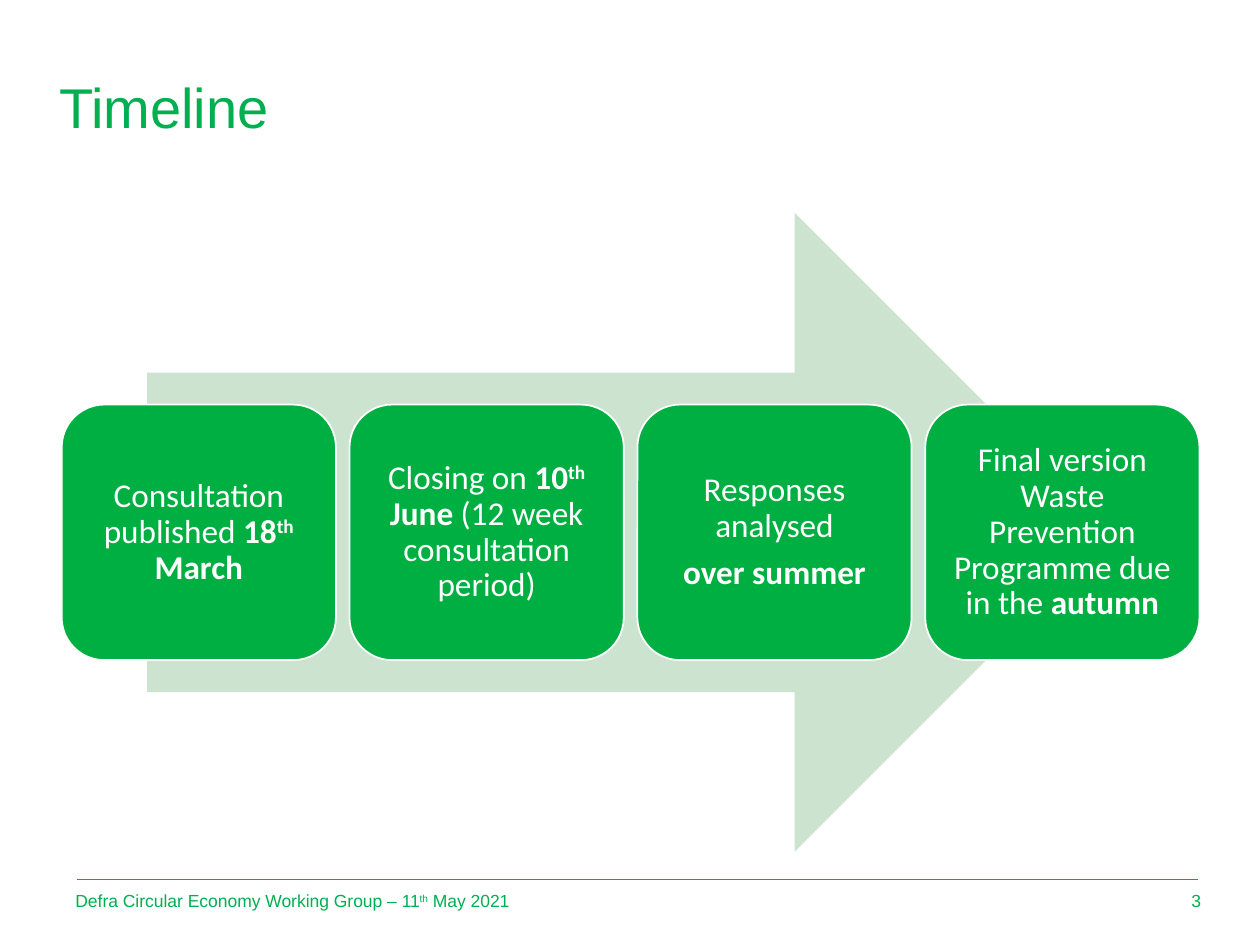
import dataclasses

import pptx
import pptx.dml.color
import pptx.enum.shapes
import pptx.enum.text
import pptx.oxml
import pptx.util

SHAPES = pptx.enum.shapes.MSO_SHAPE
ALIGN = pptx.enum.text.PP_ALIGN


@dataclasses.dataclass(frozen=True)
class Theme:
    """Colours, fonts and type sizes of the deck."""
    green: str = "00AF41"
    text_green: str = "00B050"
    pale: str = "CCE3CF"
    white: str = "FFFFFF"
    heading_font: str = "Arial"
    step_font: str = "Calibri"
    title_size: float = 32
    step_size: float = 19
    footer_size: float = 10


@dataclasses.dataclass(frozen=True)
class Box:
    """A rectangle in inches."""
    left: float
    top: float
    width: float
    height: float

    def share(self, left, top, width, height):
        """Return the box covering the given shares of this one."""
        return Box(self.left + left * self.width, self.top + top * self.height,
                   width * self.width, height * self.height)

    def lengths(self):
        """Return left, top, width and height as slide lengths."""
        return [pptx.util.Inches(value) for value in dataclasses.astuple(self)]


THEME = Theme()
STEPS = [
    [[("Consultation published ", ""), ("18", "b"), ("th", "b^"), (" March", "b")]],
    [[("Closing on ", ""), ("10", "b"), ("th", "b^"), (" June ", "b"),
      ("(12 week consultation period)", "")]],
    [[("Responses analysed", "")], [("over summer", "b")]],
    [[("Final version Waste Prevention Programme due in the ", ""), ("autumn", "b")]],
]
FOOTER = [[("Defra Circular Economy Working Group – 11", ""), ("th", "^"), (" May 2021", "")]]


def colour(code):
    """Return the colour for a hex code."""
    return pptx.dml.color.RGBColor.from_string(code)


def write(shape, paragraphs, *, font, size, color, align=ALIGN.LEFT,
          spacing=1.0, after=0, margins=(0.1, 0.05)):
    """Fill a shape with paragraphs of (text, marks) spans: b is bold, ^ is raised."""
    frame = shape.text_frame
    frame.word_wrap = True
    frame.vertical_anchor = pptx.enum.text.MSO_ANCHOR.MIDDLE
    frame.margin_left = frame.margin_right = pptx.util.Inches(margins[0])
    frame.margin_top = frame.margin_bottom = pptx.util.Inches(margins[1])
    for index, spans in enumerate(paragraphs):
        para = frame.add_paragraph() if index else frame.paragraphs[0]
        para.alignment = align
        para.line_spacing = spacing
        para.space_after = pptx.util.Pt(after)
        for text, marks in spans:
            span = para.add_run()
            span.text = text
            span.font.name = font
            span.font.size = pptx.util.Pt(size)
            span.font.color.rgb = colour(color)
            span.font.bold = "b" in marks
            if "^" in marks:
                span.font._element.set("baseline", "30000")


def add_filled(page, kind, box, fill, line=None):
    """Add a flat preset shape."""
    shape = page.shapes.add_shape(kind, *box.lengths())
    shape.shadow.inherit = False
    shape.fill.solid()
    shape.fill.fore_color.rgb = colour(fill)
    if line:
        shape.line.color.rgb = colour(line)
        shape.line.width = pptx.util.Pt(1)
    else:
        shape.line.fill.background()
    return shape


def add_label(page, box, paragraphs, **style):
    """Add a text box in the heading font and colour."""
    label = page.shapes.add_textbox(*box.lengths())
    write(label, paragraphs, font=THEME.heading_font, color=THEME.text_green, **style)


def add_title(page, box):
    """Place the heading."""
    add_label(page, box, [[("Timeline", "")]], size=THEME.title_size, spacing=0.9)


def add_timeline(page, box):
    """Place the arrow and, over it, one equal card for each step."""
    add_filled(page, SHAPES.RIGHT_ARROW, box.share(0.075, 0, 0.85, 1), THEME.pale)
    gap = 0.012
    width = (1 - gap * (len(STEPS) - 1)) / len(STEPS)
    for index, paragraphs in enumerate(STEPS):
        area = box.share(index * (width + gap), 0.3, width, 0.4)
        card = add_filled(page, SHAPES.ROUNDED_RECTANGLE, area, THEME.green, THEME.white)
        write(card, paragraphs, font=THEME.step_font, size=THEME.step_size,
              color=THEME.white, align=ALIGN.CENTER, spacing=0.9, after=6.65,
              margins=(0.08, 0.08))


def add_footer(page, box):
    """Place the rule, the event name and the page number."""
    left, top, width, _ = box.share(0.012, 0.08, 0.975, 0).lengths()
    rule = page.shapes.add_connector(pptx.enum.shapes.MSO_CONNECTOR.STRAIGHT,
                                     left, top, left + width, top)
    rule.line.color.rgb = colour(THEME.green)
    rule.line.width = pptx.util.Pt(0.5)
    rule._element.spPr.append(pptx.oxml.parse_xml(
        '<a:effectLst xmlns:a="http://schemas.openxmlformats.org/drawingml/2006/main"/>'))
    add_label(page, box.share(0, 0, 0.68, 1), FOOTER, size=THEME.footer_size)
    add_label(page, box.share(0.95, 0, 0.05, 1), [[("3", "")]],
              size=THEME.footer_size, align=ALIGN.RIGHT)


def main():
    """Build and save the deck."""
    deck = pptx.Presentation()
    sheet = Box(0, 0, 10, 7.5)
    deck.slide_width, deck.slide_height = sheet.lengths()[2:]
    page = deck.slides.add_slide(deck.slide_layouts[6])
    add_title(page, Box(0.37, 0.56, 9.15, 0.64))
    add_timeline(page, Box(0.49, 1.69, 9.03, 5.07))
    add_footer(page, Box(0.5, 6.95, 9.13, 0.4))
    deck.save("out.pptx")


if __name__ == "__main__":
    main()
